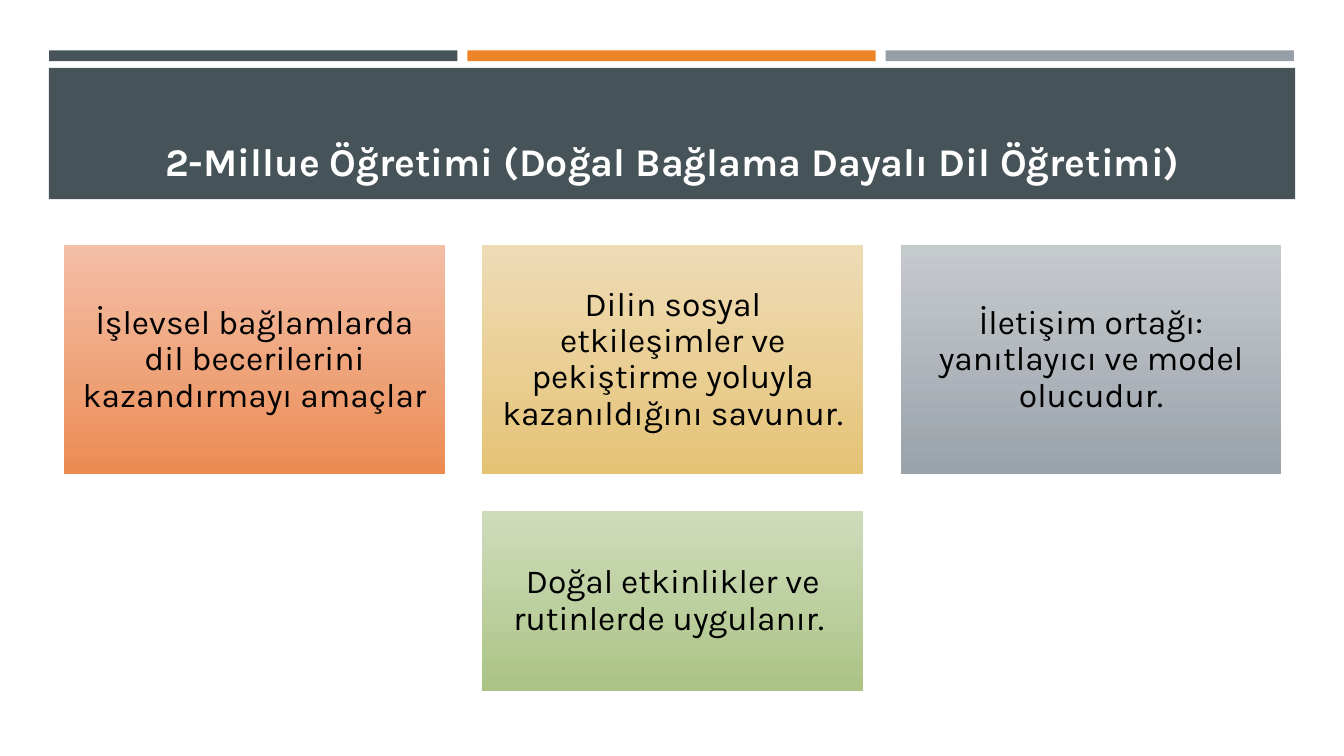
from lxml.etree import SubElement
from pptx import Presentation
from pptx.dml.color import RGBColor
from pptx.enum.shapes import MSO_SHAPE as Shape
from pptx.enum.text import MSO_ANCHOR as Anchor, PP_ALIGN as Align
from pptx.oxml.ns import qn
from pptx.util import Cm, Pt

COLORS = {
    "slate": "465359", "orange": "ED8428", "grey": "969FA7",
    "white": "FFFFFF", "black": "000000",
    "coral_top": "F3B89D", "coral_end": "ED8C53",
    "sand_top": "EED9AE", "sand_end": "E6C476",
    "steel_top": "C0C5C9", "steel_end": "9BA3AB",
    "green_top": "CAD9B4", "green_end": "ACC485",
}
TITLE = "2-Millue Öğretimi (Doğal Bağlama Dayalı Dil Öğretimi)"
STRIPES = ["slate", "orange", "grey"]
CARDS = [
    ("İşlevsel bağlamlarda dil becerilerini kazandırmayı amaçlar", "coral", 0, 6.2, 5.74),
    ("Dilin sosyal etkileşimler ve pekiştirme yoluyla kazanıldığını savunur.", "sand", 1, 6.2, 5.74),
    ("İletişim ortağı: yanıtlayıcı ve model olucudur.", "steel", 2, 6.2, 5.74),
    ("Doğal etkinlikler ve rutinlerde uygulanır. ", "green", 1, 12.9, 4.5),
]
COLUMN_STEP = 10.54


def color(name):
    return RGBColor.from_string(COLORS[name])


def apply(target, values):
    for key, value in values.items():
        setattr(target, key, value)


def add_box(slide, left, top, width, height):
    box = slide.shapes.add_shape(Shape.RECTANGLE, Cm(left), Cm(top), Cm(width), Cm(height))
    box.shadow.inherit = False
    box.line.fill.background()
    return box


def add_block(slide, left, top, width, height, tone):
    block = add_box(slide, left, top, width, height)
    block.fill.solid()
    block.fill.fore_color.rgb = color(tone)


def write(frame, text, tone, anchor, font_format):
    apply(frame, {"text": text, "word_wrap": True, "vertical_anchor": anchor})
    paragraph = frame.paragraphs[0]
    apply(paragraph, {"alignment": Align.CENTER, "line_spacing": 0.9})
    font = paragraph.runs[0].font
    apply(font, {"name": "Karla", **font_format})
    font.color.rgb = color(tone)


def add_card(slide, text, tone, column, top, height):
    card = add_box(slide, 1.63 + column * COLUMN_STEP, top, 9.57, height)
    card.fill.gradient()
    card.fill.gradient_angle = 270
    for stop, end in zip(card.fill.gradient_stops, ("top", "end")):
        stop.color.rgb = color(f"{tone}_{end}")
    top_color = next(card.element.iter(qn("a:gs")))[0]
    SubElement(top_color, qn("a:alpha"), val="90000")
    margins = ("margin_left", "margin_top", "margin_right", "margin_bottom")
    apply(card.text_frame, dict.fromkeys(margins, Cm(0.25)))
    write(card.text_frame, text, "black", Anchor.MIDDLE, {"size": Pt(24)})


def place_title(slide):
    title = slide.shapes.title
    apply(title, {"left": Cm(1.63), "top": Cm(1.96), "width": Cm(30.63), "height": Cm(2.82)})
    write(title.text_frame, TITLE, "white", Anchor.BOTTOM, {"size": Pt(28), "bold": True})
    slide.shapes.element.append(title.element)


def main():
    deck = Presentation()
    apply(deck, {"slide_width": Cm(33.87), "slide_height": Cm(19.05)})
    slide = deck.slides.add_slide(deck.slide_layouts[5])
    for column, tone in enumerate(STRIPES):
        add_block(slide, 1.24 + column * COLUMN_STEP, 1.27, 10.29, 0.27, tone)
    add_block(slide, 1.23, 1.71, 31.41, 3.31, "slate")
    place_title(slide)
    for card in CARDS:
        add_card(slide, *card)
    deck.save("out.pptx")


if __name__ == "__main__":
    main()
